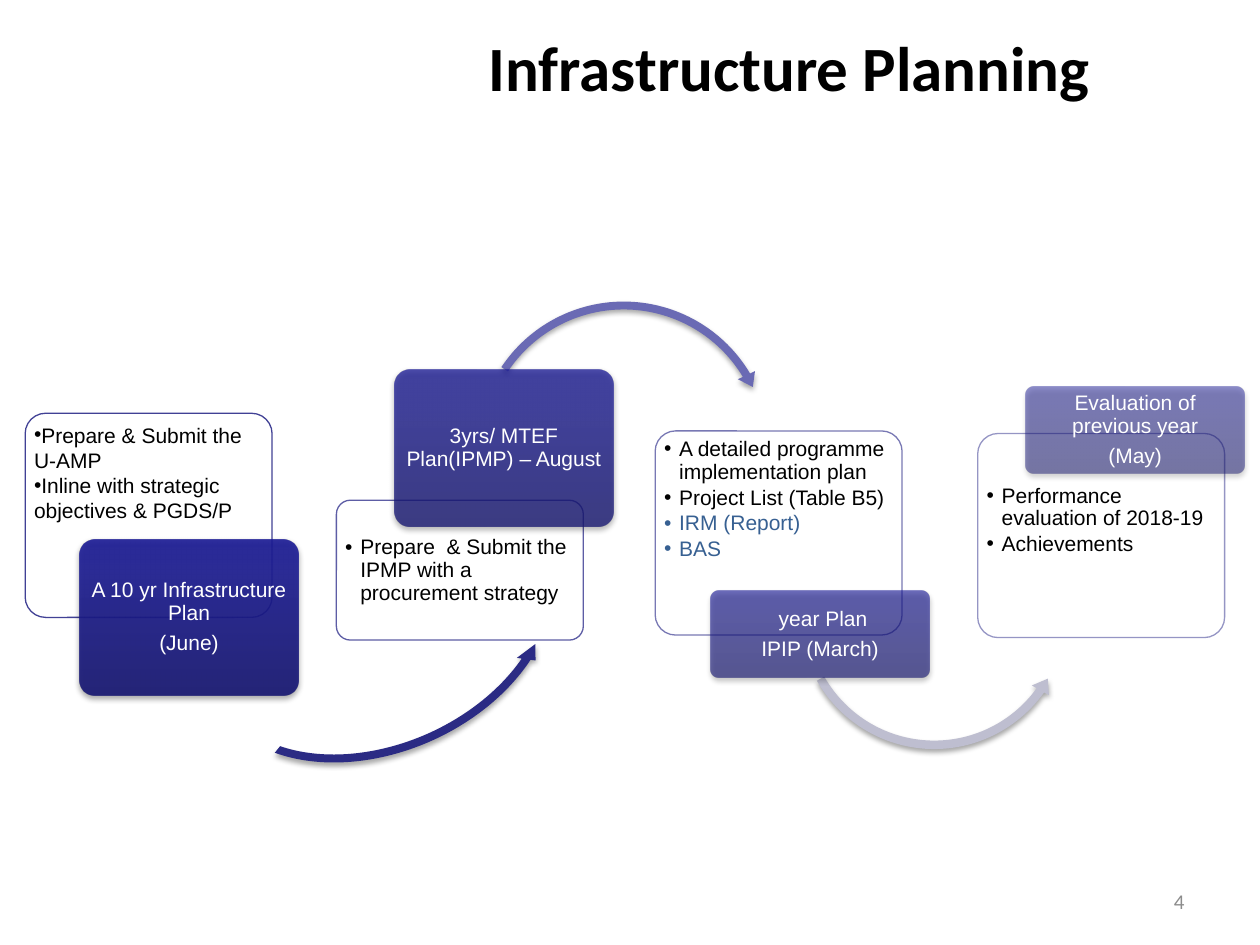
from lxml.etree import SubElement
from pptx import Presentation
from pptx.dml.color import RGBColor
from pptx.enum.shapes import MSO_SHAPE
from pptx.enum.text import MSO_ANCHOR, MSO_AUTO_SIZE, PP_ALIGN
from pptx.oxml import parse_xml
from pptx.oxml.ns import nsdecls, qn
from pptx.util import Inches, Pt

COLORS = {"black": "000000", "white": "FFFFFF", "outline": "2D2D8A", "blue": "376092",
          "number": "8C8C8C", "navy": "2B2B84", "violet": "6A6AB4", "mist": "BEBED0"}
STEP_STOPS = ((0, "171771"), (80, "1E1E93"), (100, "1C1C96"))
CARD_WIDTH, STEP_WIDTH, CARD_PAD = 1.96, 1.74, 0.04
MARGINS = {"margin_left": 0.03, "margin_right": 0.03}
ITEM_FORMAT = {"level": 1, "alignment": PP_ALIGN.LEFT, "space_before": Pt(0)}
STEP_FORMAT = {"alignment": PP_ALIGN.CENTER, "line_spacing": 0.9, "space_after": Pt(4.2)}
LOOSE = {"indent": 0, "line_spacing": 1.0, "space_after": Pt(0)}
TIGHT = {"indent": 0.12, "line_spacing": 0.9, "space_after": Pt(1.8)}

STAGES = [
    {"card": (0.2, 3.28, 1.62), "list": (3.32, 1.2), "step": (0.63, 4.28, 1.24),
     "card_alpha": 90, "spacing": LOOSE,
     "items": [("Prepare & Submit the U-AMP", "black"),
               ("Inline with strategic objectives & PGDS/P", "black")],
     "label": ["A 10 yr Infrastructure Plan", "(June)"],
     "arrow": (MSO_SHAPE.LEFT_CIRCULAR_ARROW, (1.51, 3.87, 3, 2.14), 335.7, "navy",
               (0.03, 3.69, 23.01, 91.8, 0.035))},
    {"card": (2.67, 3.97, 1.11), "list": (4.23, 0.82), "step": (3.13, 2.93, 1.25),
     "card_alpha": 77, "spacing": TIGHT,
     "items": [("Prepare  & Submit the IPMP with a procurement strategy", "black")],
     "label": ["3yrs/ MTEF Plan(IPMP) – August"],
     "arrow": (MSO_SHAPE.CIRCULAR_ARROW, (3.74, 2.35, 2.42, 2.42), 0, "violet",
               (0.026, 3.22, 197.48, 128.21, 0.031))},
    {"card": (5.2, 3.42, 1.62), "list": (3.45, 1.2), "step": (5.64, 4.69, 0.69),
     "card_alpha": 63, "spacing": TIGHT,
     "items": [("A detailed programme implementation plan", "black"),
               ("Project List (Table B5)", "black"), ("IRM (Report)", "blue"), ("BAS", "blue")],
     "label": [" year Plan", "IPIP (March)"],
     "arrow": (MSO_SHAPE.LEFT_CIRCULAR_ARROW, (6.3, 3.76, 2.23, 2.23), 0, "mist",
               (0.03, 3.64, 21.39, 90.25, 0.035))},
    {"card": (7.76, 3.44, 1.62), "list": (3.82, 1.2), "step": (8.14, 3.07, 0.69),
     "card_alpha": 50, "spacing": TIGHT,
     "items": [("Performance evaluation of 2018-19", "black"), ("Achievements", "black")],
     "label": ["Evaluation of previous year", "(May)"], "arrow": None},
]


def apply(target, values):
    """Set every attribute in values on target."""
    for name, value in values.items():
        setattr(target, name, value)


def place(shape, box):
    """Move and size a shape in inches."""
    apply(shape, dict(zip(("left", "top", "width", "height"), map(Inches, box))))


def write(paragraph, text, color, font="Arial", size=12, bold=False):
    """Add one formatted run to a paragraph."""
    run = paragraph.add_run()
    run.text = text
    apply(run.font, {"name": font, "size": Pt(size), "bold": bold})
    run.font.color.rgb = RGBColor.from_string(COLORS[color])


def set_frame(frame, anchor, margins):
    """Wrap a text frame, anchor it and set its margins."""
    apply(frame, {"word_wrap": True, "auto_size": MSO_AUTO_SIZE.NONE, "vertical_anchor": anchor})
    apply(frame, {side: Inches(size) for side, size in margins.items()})


def paragraphs(frame, count):
    """Return count paragraphs of a fresh frame."""
    return [frame.paragraphs[0]] + [frame.add_paragraph() for _ in range(count - 1)]


def set_alpha(color_parent, percent):
    """Make the solid colour under an element partly transparent."""
    color = color_parent.find(".//" + qn("a:srgbClr"))
    SubElement(color, qn("a:alpha"), val=str(percent * 1000))


def add_shadow(shape):
    """Give a shape a soft shadow below it."""
    shape.shadow.inherit = False
    effects = shape.element.spPr.find(qn("a:effectLst"))
    effects.append(parse_xml(
        f'<a:outerShdw {nsdecls("a")} blurRad="40000" dist="23000" dir="5400000" rotWithShape="0">'
        f'<a:srgbClr val="{COLORS["black"]}"><a:alpha val="35000"/></a:srgbClr></a:outerShdw>'))


def add_rounded(slide, box):
    """Add a white rounded rectangle without shadow."""
    rounded = slide.shapes.add_shape(MSO_SHAPE.ROUNDED_RECTANGLE, *map(Inches, box))
    rounded.adjustments[0] = 0.1
    rounded.shadow.inherit = False
    rounded.fill.solid()
    rounded.fill.fore_color.rgb = RGBColor.from_string(COLORS["white"])
    return rounded


def add_card(slide, stage):
    """Add the outlined card of a stage."""
    left, top, height = stage["card"]
    card = add_rounded(slide, (left, top, CARD_WIDTH, height))
    card.line.color.rgb = RGBColor.from_string(COLORS["outline"])
    card.line.width = Pt(0.75)
    set_alpha(card.element.spPr.find(qn("a:solidFill")), 90)
    set_alpha(card.element.spPr.find(qn("a:ln")), stage["card_alpha"])


def fill_list(body, stage):
    """Fill a body placeholder with the bullets of a stage, above its card."""
    top, height = stage["list"]
    place(body, (stage["card"][0] + CARD_PAD, top, CARD_WIDTH - 2 * CARD_PAD, height))
    set_frame(body.text_frame, MSO_ANCHOR.TOP,
              MARGINS | {"margin_top": 0.03, "margin_bottom": 0.03})
    spacing = dict(stage["spacing"])
    indent = Inches(spacing.pop("indent"))
    items = stage["items"]
    for paragraph, (text, color) in zip(paragraphs(body.text_frame, len(items)), items):
        properties = paragraph._p.get_or_add_pPr()
        apply(paragraph, ITEM_FORMAT | spacing)
        properties.set("marL", str(indent))
        properties.set("indent", str(-indent))
        SubElement(properties, qn("a:buFont"), typeface="Arial")
        SubElement(properties, qn("a:buChar"), char="•")
        write(paragraph, text, color)
    body.element.getparent().append(body.element)


def add_arrow(slide, kind, box, rotation, color, bends):
    """Add a curved arrow leading to the next stage."""
    arrow = slide.shapes.add_shape(kind, *map(Inches, box))
    arrow.rotation = rotation
    for index, bend in enumerate(bends):
        arrow.adjustments[index] = bend
    arrow.fill.solid()
    arrow.fill.fore_color.rgb = RGBColor.from_string(COLORS[color])
    arrow.line.fill.background()
    add_shadow(arrow)


def add_step(slide, stage):
    """Add the gradient box of a stage and its label."""
    left, top, height = stage["step"]
    step = add_rounded(slide, (left, top, STEP_WIDTH, height))
    step.line.fill.background()
    stops = "".join(
        f'<a:gs pos="{position * 1000}"><a:srgbClr val="{color}">'
        f'<a:alpha val="{stage["card_alpha"] * 1000}"/></a:srgbClr></a:gs>'
        for position, color in STEP_STOPS)
    properties = step.element.spPr
    properties.replace(properties.find(qn("a:solidFill")), parse_xml(
        f'<a:gradFill {nsdecls("a")} rotWithShape="1"><a:gsLst>{stops}</a:gsLst>'
        '<a:lin ang="16200000" scaled="0"/></a:gradFill>'))
    add_shadow(step)
    pad = 0.03 * height
    label = slide.shapes.add_textbox(*map(Inches, (
        left + pad, top + pad, STEP_WIDTH - 2 * pad, height - 2 * pad))).text_frame
    set_frame(label, MSO_ANCHOR.MIDDLE, MARGINS | {"margin_top": 0.02, "margin_bottom": 0.02})
    for paragraph, text in zip(paragraphs(label, len(stage["label"])), stage["label"]):
        apply(paragraph, STEP_FORMAT)
        write(paragraph, text, "white")


def add_heading(title):
    """Fill and place the title placeholder."""
    place(title, (2.8, 0.13, 6.93, 0.79))
    set_frame(title.text_frame, MSO_ANCHOR.MIDDLE, {})
    heading = title.text_frame.paragraphs[0]
    heading.alignment = PP_ALIGN.CENTER
    write(heading, "Infrastructure Planning", "black", "Calibri", 36, True)


def add_page_number(slide):
    """Add the page number at the lower right."""
    frame = slide.shapes.add_textbox(*map(Inches, (7.17, 6.95, 2.33, 0.4))).text_frame
    set_frame(frame, MSO_ANCHOR.MIDDLE, {})
    number = frame.paragraphs[0]
    number.alignment = PP_ALIGN.RIGHT
    write(number, "4", "number", "Calibri")


def main():
    """Build the slide and save it."""
    deck = Presentation()
    apply(deck, {"slide_width": Inches(10), "slide_height": Inches(7.5)})
    slide = deck.slides.add_slide(deck.slide_layouts.get_by_name("Comparison"))
    title, *bodies = slide.placeholders
    add_heading(title)
    for body, stage in zip(bodies, STAGES):
        add_card(slide, stage)
        fill_list(body, stage)
        if stage["arrow"]:
            add_arrow(slide, *stage["arrow"])
        add_step(slide, stage)
    add_page_number(slide)
    deck.save("out.pptx")


if __name__ == "__main__":
    main()
